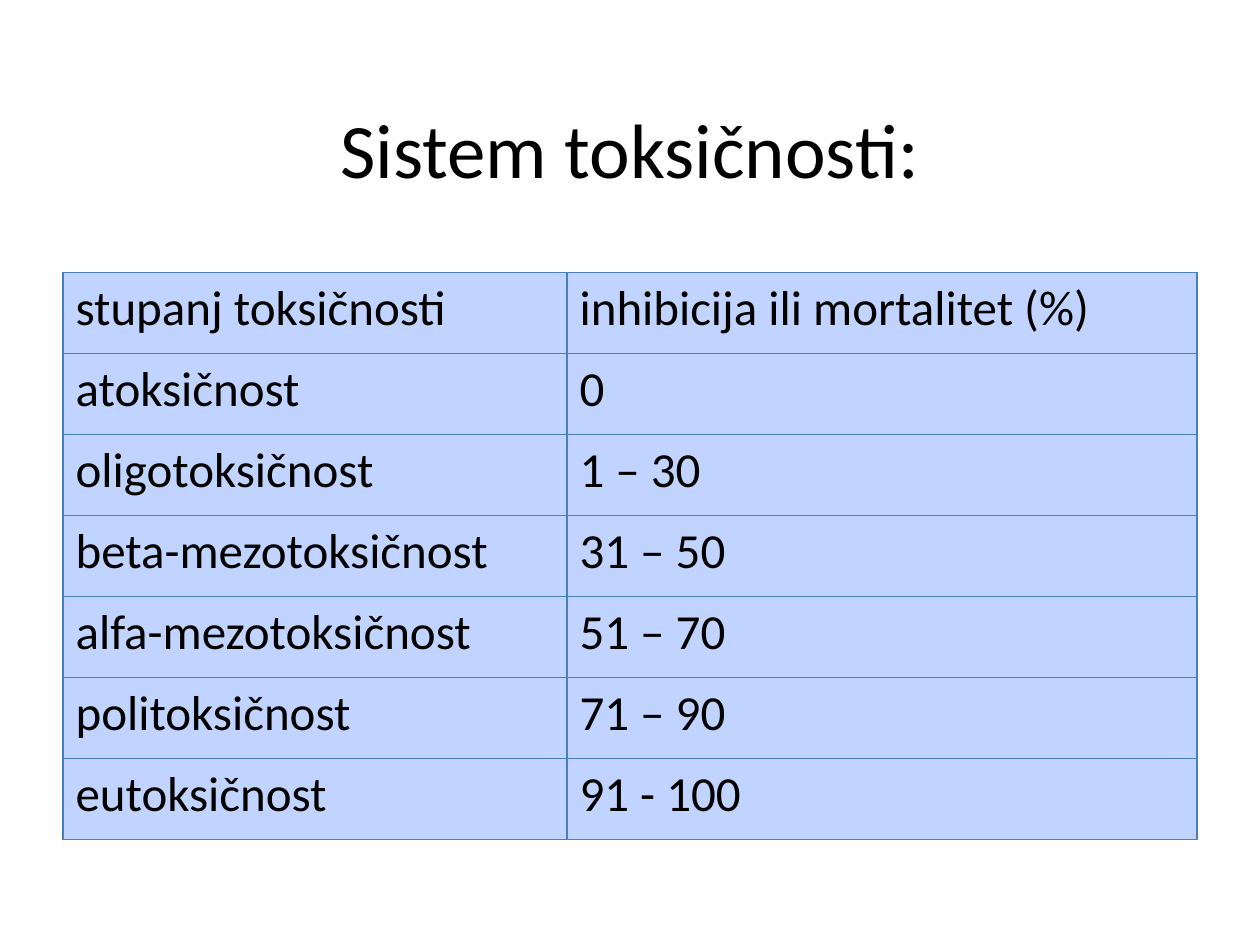
import pptx
import pptx.util
import pptx.dml.color
import pptx.enum.text
import pptx.oxml
import pptx.oxml.ns

Cm = pptx.util.Cm
Pt = pptx.util.Pt


def color(hex_value):
    return pptx.dml.color.RGBColor.from_string(hex_value)


def add_run(paragraph, text, size):
    run = paragraph.add_run()
    run.text = text
    run.font.name = "Calibri"
    run.font.size = Pt(size)
    run.font.color.rgb = color("000000")


prs = pptx.Presentation()
prs.slide_width = Cm(25.4)
prs.slide_height = Cm(19.05)
slide = prs.slides.add_slide(prs.slide_layouts[6])

# Title
title = slide.shapes.add_textbox(Cm(1.27), Cm(1.07), Cm(22.86), Cm(3.81)).text_frame
title.word_wrap = True
title.vertical_anchor = pptx.enum.text.MSO_ANCHOR.MIDDLE
title.paragraphs[0].alignment = pptx.enum.text.PP_ALIGN.CENTER
add_run(title.paragraphs[0], "Sistem toksičnosti:", 44)

# Toxicity table
levels = [
    ("stupanj toksičnosti", "inhibicija ili mortalitet (%)"),
    ("atoksičnost", "0"),
    ("oligotoksičnost", "1 – 30"),
    ("beta-mezotoksičnost", "31 – 50"),
    ("alfa-mezotoksičnost", "51 – 70"),
    ("politoksičnost", "71 – 90"),
    ("eutoksičnost", "91 - 100"),
]
toxicity = slide.shapes.add_table(
    len(levels), 2, Cm(1.27), Cm(5.5), Cm(22.86), Cm(11.43)
).table
toxicity.first_row = False
toxicity.horz_banding = False
toxicity.columns[0].width = Cm(10.16)
toxicity.columns[1].width = Cm(12.7)

for row, level in enumerate(levels):
    for column, text in enumerate(level):
        cell = toxicity.cell(row, column)
        add_run(cell.text_frame.paragraphs[0], text, 28)

        # Borders come before the fill in the cell properties
        properties = cell._tc.get_or_add_tcPr()
        for side in ("lnL", "lnR", "lnT", "lnB"):
            properties.append(pptx.oxml.parse_xml(
                f'<a:{side} {pptx.oxml.ns.nsdecls("a")} w="{Pt(0.75)}">'
                '<a:solidFill><a:srgbClr val="4B7EBC"/></a:solidFill>'
                f'</a:{side}>'
            ))
        cell.fill.solid()
        cell.fill.fore_color.rgb = color("C0D4FF")

prs.save("out.pptx")
